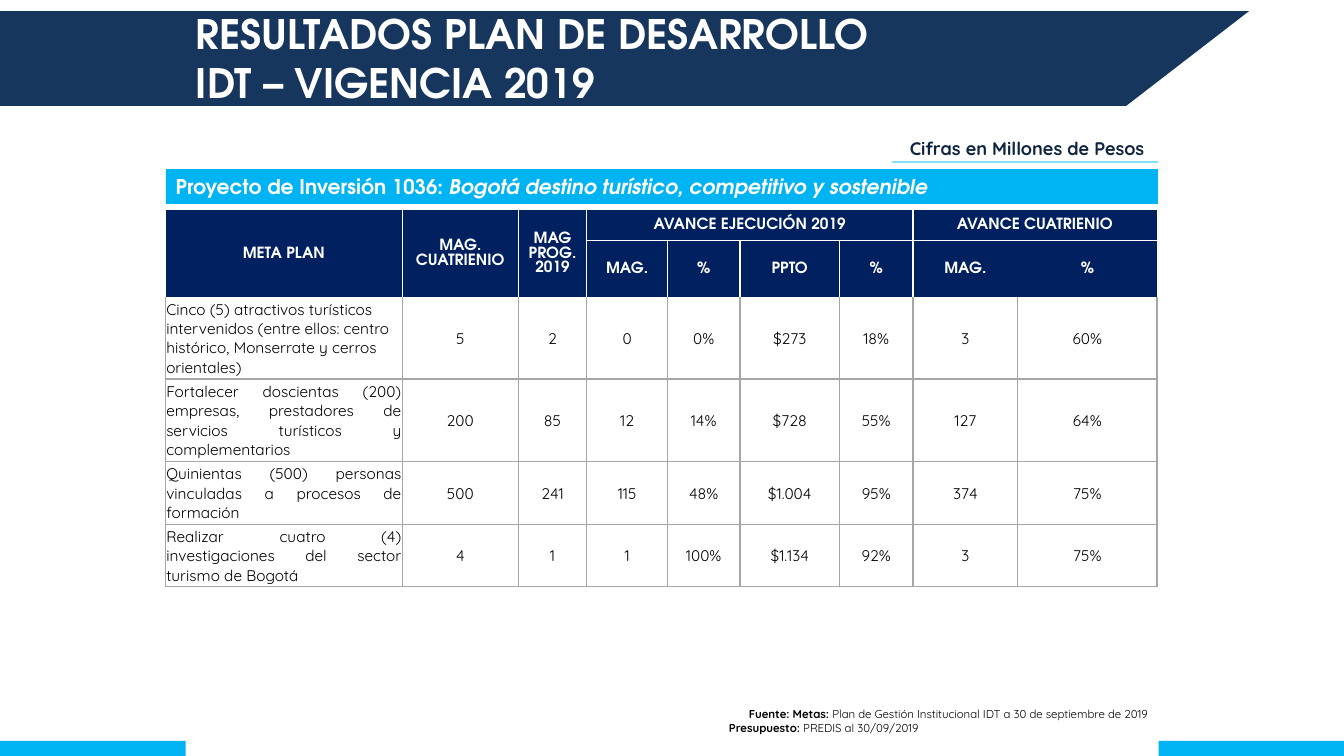
from lxml import etree
from pptx import Presentation
from pptx.dml.color import RGBColor
from pptx.enum.shapes import MSO_CONNECTOR, MSO_SHAPE
from pptx.enum.text import MSO_ANCHOR, MSO_AUTO_SIZE, PP_ALIGN
from pptx.oxml.ns import qn
from pptx.util import Cm, Pt

TITLE = "RESULTADOS PLAN DE DESARROLLO\nIDT – VIGENCIA 2019"
UNITS = "Cifras en Millones de Pesos"
# Runs are (text, bold, italic)
PROJECT = [[("Proyecto de Inversión 1036: ", True, False),
            ("Bogotá destino turístico, competitivo y sostenible", True, True)]]
SOURCE = [[("Fuente: Metas:", True, False),
           (" Plan de Gestión Institucional IDT a 30 de septiembre de 2019", False, False)],
          [("Presupuesto: ", True, False), ("PREDIS al 30/09/2019", False, False)]]
HEAD = [
    ["META PLAN", "MAG. CUATRIENIO", "MAG PROG. 2019", "AVANCE EJECUCIÓN 2019",
     "", "", "", "AVANCE CUATRIENIO", ""],
    ["", "", "", "MAG.", "%", "PPTO", "%", "MAG.", "%"],
]
GOALS = [
    ["Cinco (5) atractivos turísticos intervenidos (entre ellos: centro histórico, "
     "Monserrate y cerros orientales)",
     "5", "2", "0", "0%", "$273", "18%", "3", "60%"],
    ["Fortalecer doscientas (200) empresas, prestadores de servicios turísticos "
     "y complementarios",
     "200", "85", "12", "14%", "$728", "55%", "127", "64%"],
    ["Quinientas (500) personas vinculadas a procesos de formación",
     "500", "241", "115", "48%", "$1.004", "95%", "374", "75%"],
    ["Realizar cuatro (4) investigaciones del sector turismo de Bogotá",
     "4", "1", "1", "100%", "$1.134", "92%", "3", "75%"],
]
SPANS = [(0, 0, 1, 0), (0, 1, 1, 1), (0, 2, 1, 2), (0, 3, 0, 6), (0, 7, 0, 8)]
COLS = [5.97, 2.92, 1.73, 2.03, 1.83, 2.51, 1.85, 2.64, 3.51]
ROWS = [0.79, 1.08, 2.06, 2.08, 1.58, 1.58]
BAND = [(0, 0.28), (31.48, 0.28), (28.38, 2.67), (0, 2.67)]

WHITE = RGBColor(0xFF, 0xFF, 0xFF)
BLACK = RGBColor(0, 0, 0)
CYAN = RGBColor(0x00, 0xB3, 0xF2)
SKY = RGBColor(0x85, 0xDF, 0xFF)
BLUE = RGBColor(0x17, 0x36, 0x5D)
NAVY = RGBColor(0x00, 0x20, 0x60)
INK = RGBColor(0x0F, 0x24, 0x3E)
GRAY = RGBColor(0xA6, 0xA6, 0xA6)
HEAVY, LIGHT = "TeX Gyre Adventor", "Quicksand"
LEFT, RIGHT = PP_ALIGN.LEFT, PP_ALIGN.RIGHT
MID, FULL = PP_ALIGN.CENTER, PP_ALIGN.JUSTIFY
CENTER = MSO_ANCHOR.MIDDLE

deck = Presentation()
deck.slide_width, deck.slide_height = Cm(33.87), Cm(19.05)
slide = deck.slides.add_slide(deck.slide_layouts[5])
shapes = slide.shapes


def style(font, face, size, color, bold, italic=False):
    font.name, font.size, font.bold, font.italic = face, Pt(size), bold, italic
    font.color.rgb = color


def paint(shape, color):
    shape.shadow.inherit = False
    shape.fill.solid()
    shape.fill.fore_color.rgb = color
    shape.line.fill.background()
    return shape


def bar(x, y, w, h, color):
    return paint(shapes.add_shape(MSO_SHAPE.RECTANGLE, Cm(x), Cm(y), Cm(w), Cm(h)), color)


def write(frame, lines, face, size, color):
    """Fill a frame with paragraphs made of mixed runs."""
    frame.word_wrap = True
    frame.vertical_anchor = CENTER
    frame.text = "\n" * (len(lines) - 1)
    for para, runs in zip(frame.paragraphs, lines):
        para.alignment = LEFT
        for text, bold, italic in runs:
            run = para.add_run()
            run.text = text
            style(run.font, face, size, color, bold, italic)


def edge(cell, colors):
    """Set left, right, top and bottom borders; None means no line."""
    props = cell._tc.get_or_add_tcPr()
    for i, (side, color) in enumerate(zip("LRTB", colors)):
        line = etree.Element(qn(f"a:ln{side}"), w=str(Pt(1)))
        if color is None:
            etree.SubElement(line, qn("a:noFill"))
        else:
            solid = etree.SubElement(line, qn("a:solidFill"))
            etree.SubElement(solid, qn("a:srgbClr"), val=str(color))
        props.insert(i, line)


def set_cell(cell, text, align, fill, borders, font):
    cell.text = text
    cell.vertical_anchor = CENTER
    cell.margin_left = cell.margin_right = cell.margin_top = Cm(0.02)
    cell.margin_bottom = 0
    if fill is None:
        cell.fill.background()
    else:
        cell.fill.solid()
        cell.fill.fore_color.rgb = fill
    edge(cell, borders)
    para = cell.text_frame.paragraphs[0]
    para.alignment = align
    style(para.font, *font)
    for run in para.runs:
        style(run.font, *font)


def make_table(x, y, cols, rows):
    table = shapes.add_table(len(rows), len(cols), Cm(x), Cm(y),
                             Cm(sum(cols)), Cm(sum(rows))).table
    table.first_row = table.horz_banding = False
    for col, width in zip(table.columns, cols):
        col.width = Cm(width)
    for row, height in zip(table.rows, rows):
        row.height = Cm(height)
    return table


# Frame and title
bar(0, 18.67, 33.87, 0.38, CYAN)
band = shapes.build_freeform(Cm(BAND[0][0]), Cm(BAND[0][1]))
band.add_line_segments([(Cm(x), Cm(y)) for x, y in BAND[1:]])
paint(band.convert_to_shape(), BLUE)
bar(4.68, 18.29, 24.52, 0.76, WHITE)

title = shapes.title
title.left, title.top, title.width, title.height = Cm(4.68), Cm(0.08), Cm(21.87), Cm(2.74)
title.element.getparent().append(title.element)
frame = title.text_frame
frame.text = TITLE
frame.word_wrap, frame.auto_size = True, MSO_AUTO_SIZE.NONE
frame.vertical_anchor = CENTER
for para in frame.paragraphs:
    para.alignment = LEFT
    style(para.runs[0].font, HEAVY, 29, WHITE, True)

# Project band and source
write(bar(4.18, 4.26, 25, 0.88, CYAN).text_frame, PROJECT, HEAVY, 14.5, WHITE)
note = shapes.add_textbox(Cm(16.94), Cm(17.69), Cm(12.24), Cm(0.94)).text_frame
write(note, SOURCE, LIGHT, 8.2, BLACK)
note.paragraphs[0].alignment = RIGHT
note.paragraphs[1]._p.get_or_add_pPr().set("marL", str(Cm(1.18)))

# Goals table
table = make_table(4.17, 5.28, COLS, ROWS)
last = len(COLS) - 1
for r, texts in enumerate(HEAD + GOALS):
    for c, text in enumerate(texts):
        if r < len(HEAD):
            sides = (None if c == last else WHITE, None if c >= last - 1 else WHITE,
                     WHITE, WHITE)
            set_cell(table.cell(r, c), text, MID, NAVY, sides,
                     (HEAVY, 11, WHITE, True))
        else:
            first = r == len(HEAD)
            align = MID if c else LEFT if first else FULL
            sides = (GRAY, GRAY, WHITE if first else GRAY, GRAY)
            set_cell(table.cell(r, c), text, align, None, sides,
                     (LIGHT, 11, BLACK, False))
for top, left, low, right in SPANS:
    table.cell(top, left).merge(table.cell(low, right))

# Units label
units = make_table(21.28, 3.2, [7.57], [1.09])
set_cell(units.cell(0, 0), UNITS, RIGHT, None, [None] * 4, (LIGHT, 13, INK, True))
rule = shapes.add_connector(MSO_CONNECTOR.STRAIGHT, Cm(29.18), Cm(4.08), Cm(22.48), Cm(4.08))
rule.line.color.rgb, rule.line.width = SKY, Pt(1)
etree.SubElement(rule.element.spPr, qn("a:effectLst"))

deck.save("out.pptx")
